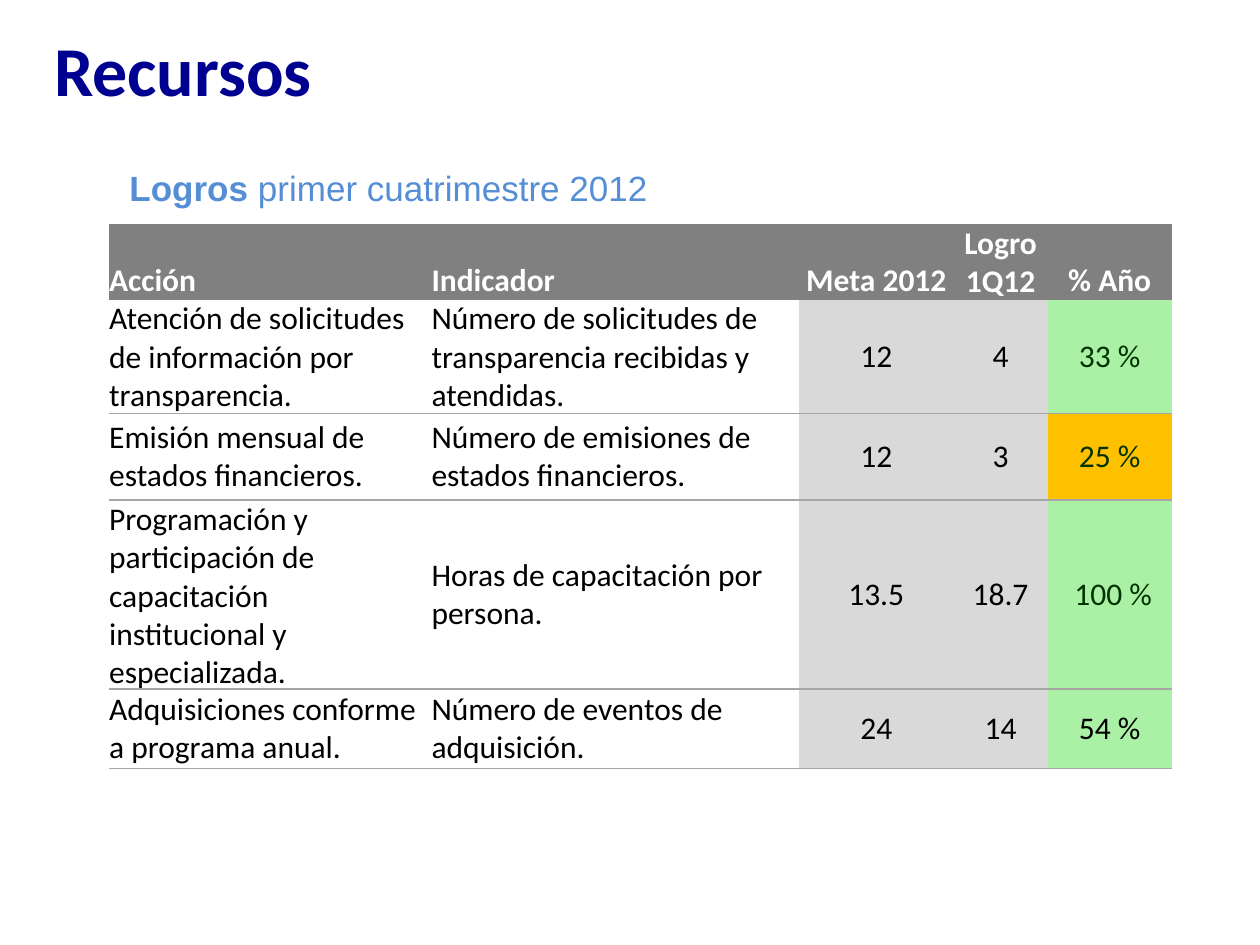
import pptx
import pptx.dml.color
import pptx.enum.text
import pptx.oxml
import pptx.oxml.ns
import pptx.util
from pptx.util import Cm

ALIGN = pptx.enum.text.PP_ALIGN
ANCHOR = pptx.enum.text.MSO_ANCHOR

HEADINGS = ["Acción", "Indicador", "Meta 2012", "Logro 1Q12", "% Año"]
GREEN, AMBER = "AAF1A5", "FFC000"
DARK_GREEN, BLACK = "003300", "000000"
# action, indicator, goal, achievement, share of year, status fill, share colour
ACHIEVEMENTS = [
    ("Atención de solicitudes de información por transparencia.",
     "Número de solicitudes de transparencia recibidas y atendidas.",
     "12", "4", "33 %", GREEN, DARK_GREEN),
    ("Emisión mensual de estados financieros.",
     "Número de emisiones de estados financieros.",
     "12", "3", "25 %", AMBER, DARK_GREEN),
    ("Programación y participación de capacitación institucional y especializada.",
     "Horas de capacitación por persona.",
     "13.5", "18.7", " 100 %", GREEN, DARK_GREEN),
    ("Adquisiciones conforme a programa anual.",
     "Número de eventos de adquisición.",
     "24", "14", "54 %", GREEN, BLACK),
]
COLUMN_WIDTHS = [6.5, 7.41, 3.11, 1.9, 2.5]
ROW_HEIGHTS = [1.17, 1.75, 1.75, 2.62, 1.6]


def color(hex_code):
    return pptx.dml.color.RGBColor.from_string(hex_code)


def add_text(paragraph, text, font="Calibri", size=18, fill=BLACK, bold=False):
    run = paragraph.add_run()
    run.text = text
    run.font.name = font
    run.font.size = pptx.util.Pt(size)
    run.font.bold = bold
    run.font.color.rgb = color(fill)


class SlideBuilder:
    title_color = "000090"
    subtitle_color = "558ED5"
    header_fill = "808080"
    number_fill = "D9D9D9"
    rule_color = "A6A6A6"

    def __init__(self, presentation):
        self.slide = presentation.slides.add_slide(presentation.slide_layouts[6])

    def text_box(self, left, top, width, height, anchor=ANCHOR.TOP):
        """Add an empty text box and return its first paragraph."""
        box = self.slide.shapes.add_textbox(Cm(left), Cm(top), Cm(width), Cm(height))
        box.text_frame.word_wrap = True
        box.text_frame.vertical_anchor = anchor
        return box.text_frame.paragraphs[0]

    def title(self, text):
        paragraph = self.text_box(0.84, 0.43, 21.16, 2.34, ANCHOR.MIDDLE)
        paragraph.line_spacing = pptx.util.Pt(36)
        add_text(paragraph, text, size=40, fill=self.title_color, bold=True)

    def subtitle(self, lead, rest):
        paragraph = self.text_box(2.36, 3.23, 20.96, 1.22)
        for text, bold in ((lead, True), (rest, False)):
            add_text(paragraph, text, font="Arial", size=20,
                     fill=self.subtitle_color, bold=bold)

    def borders(self, cell, ruled_sides):
        """Draw a thin rule on the given sides and clear the others."""
        properties = cell._tc.get_or_add_tcPr()
        for side in "LRTB":
            paint = "<a:noFill/>"
            if side in ruled_sides:
                paint = f'<a:solidFill><a:srgbClr val="{self.rule_color}"/></a:solidFill>'
            properties.append(pptx.oxml.parse_xml(
                f'<a:ln{side} {pptx.oxml.ns.nsdecls("a")} w="12700">{paint}</a:ln{side}>'))

    def cell(self, cell, text, align, anchor=ANCHOR.MIDDLE, background=None,
             ruled_sides="", **text_format):
        cell.margin_left = cell.margin_right = cell.margin_top = cell.margin_bottom = 0
        cell.vertical_anchor = anchor
        self.borders(cell, ruled_sides)
        if background:
            cell.fill.solid()
            cell.fill.fore_color.rgb = color(background)
        else:
            cell.fill.background()
        paragraph = cell.text_frame.paragraphs[0]
        paragraph.alignment = align
        add_text(paragraph, text, **text_format)

    def table(self, left, top):
        table = self.slide.shapes.add_table(
            len(ROW_HEIGHTS), len(COLUMN_WIDTHS), Cm(left), Cm(top),
            Cm(sum(COLUMN_WIDTHS)), Cm(sum(ROW_HEIGHTS))).table
        table.first_row = table.horz_banding = False
        for column, width in zip(table.columns, COLUMN_WIDTHS):
            column.width = Cm(width)
        for row, height in zip(table.rows, ROW_HEIGHTS):
            row.height = Cm(height)

        for index, heading in enumerate(HEADINGS):
            self.cell(table.cell(0, index), heading,
                      ALIGN.JUSTIFY if index < 2 else ALIGN.CENTER,
                      ANCHOR.BOTTOM, self.header_fill, fill="FFFFFF", bold=True)

        for row_index, (*texts, status, share_color) in enumerate(ACHIEVEMENTS, 1):
            backgrounds = [None, None, self.number_fill, self.number_fill, status]
            for index, (text, background) in enumerate(zip(texts, backgrounds)):
                self.cell(table.cell(row_index, index), text,
                          ALIGN.LEFT if index < 2 else ALIGN.CENTER,
                          background=background,
                          ruled_sides="B" if row_index == 1 else "TB",
                          fill=share_color if index == 4 else BLACK)


def main():
    presentation = pptx.Presentation()
    presentation.slide_width = Cm(25.4)
    presentation.slide_height = Cm(19.05)
    builder = SlideBuilder(presentation)
    builder.title("Recursos")
    builder.subtitle("Logros", " primer cuatrimestre 2012")
    builder.table(2.2, 4.52)
    presentation.save("out.pptx")


if __name__ == "__main__":
    main()
